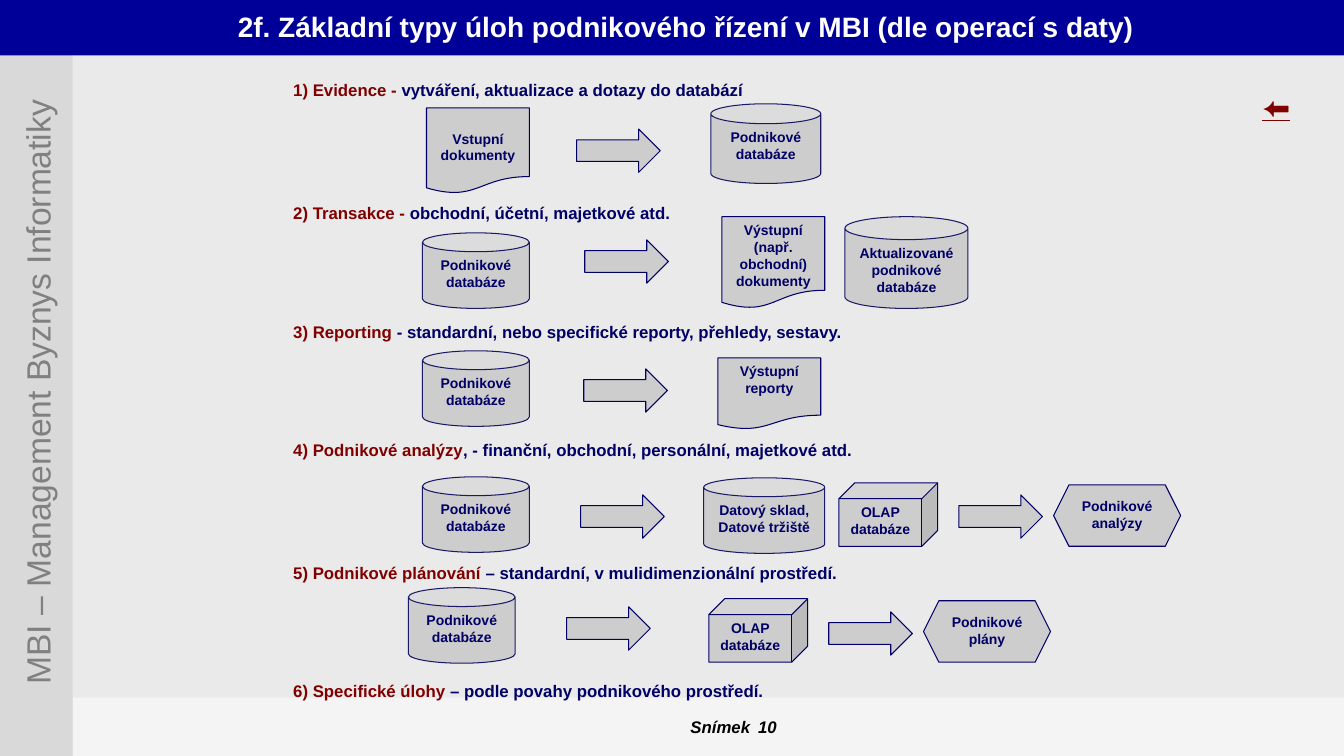
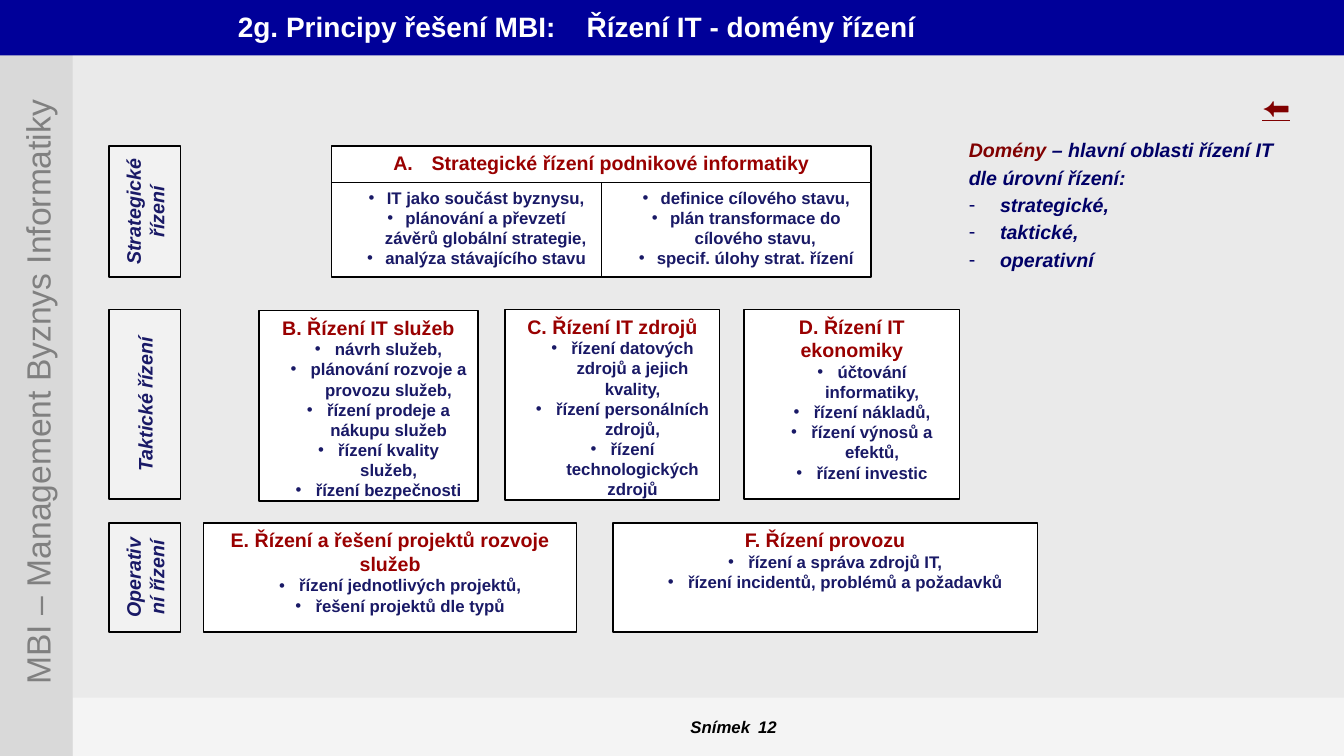
from dataclasses import dataclass

from lxml import etree
from pptx import Presentation
from pptx.dml.color import RGBColor
from pptx.enum.shapes import MSO_SHAPE as Preset
from pptx.enum.text import MSO_ANCHOR as Anchor, PP_ALIGN as Align
from pptx.oxml.ns import qn
from pptx.util import Inches, Pt

FONT = "Arial"
NAVY, INDIGO, MAROON, RED = "000066", "191966", "800000", "990000"
WHITE, BLACK = "FFFFFF", "000000"
PAGE_FILL, TITLE_BAND, SIDE_BAND, SIDE_TEXT = "EAEAEA", "000099", "D9D9D9", "808080"
LEVEL_FILL, SYMBOL_FILL = "F2F2F2", "B2B2B2"
WIDTH, HEIGHT, SIDE_WIDTH = 13.33, 7.5, 0.72

CAN, CUBE, HEXAGON = Preset.CAN, Preset.CUBE, Preset.HEXAGON
ARROW, DOCUMENT = Preset.RIGHT_ARROW, Preset.FLOWCHART_DOCUMENT
SYMBOL_SIZES = {CAN: (1.06, 0.75), CUBE: (0.98, 0.63), HEXAGON: (1.26, 0.61),
                ARROW: (0.83, 0.43), DOCUMENT: (1.02, 0.85)}


@dataclass
class Line:
    """One paragraph; spans are (text, colour) pairs."""
    spans: list
    size: float
    bold: bool = True
    italic: bool = False
    underline: bool = False
    align: Align = Align.LEFT
    bullet: str = ""
    margin: float = 0
    hanging: float = 0
    before: float = 0
    tab: float = 0


def colour(value):
    return RGBColor.from_string(value)


def box_of(left, top, width, height):
    return [Inches(value) for value in (left, top, width, height)]


def set_bullet(para, line):
    props = para._p.get_or_add_pPr()
    props.set("marL", str(Inches(line.margin)))
    props.set("indent", str(-Inches(line.hanging)))
    if line.bullet == "A.":
        etree.SubElement(props, qn("a:buAutoNum"), type="alphaUcPeriod")
    else:
        etree.SubElement(props, qn("a:buFont"), typeface=FONT)
        etree.SubElement(props, qn("a:buChar"), char=line.bullet)


def set_tab(para, position):
    stops = etree.SubElement(para._p.get_or_add_pPr(), qn("a:tabLst"))
    etree.SubElement(stops, qn("a:tab"), pos=str(Inches(position)), algn="l")


def write(shape, lines, anchor=Anchor.TOP, wrap=True):
    frame = shape.text_frame
    frame.word_wrap = wrap
    frame.vertical_anchor = anchor
    for index, line in enumerate(lines):
        para = frame.add_paragraph() if index else frame.paragraphs[0]
        if line.bullet:
            set_bullet(para, line)
        if line.tab:
            set_tab(para, line.tab)
        para.alignment = line.align
        if index and line.before:
            para.space_before = Pt(line.before)
        for text, tint in line.spans:
            span = para.add_run()
            span.text = text
            font = span.font
            font.name, font.size = FONT, Pt(line.size)
            font.bold, font.italic = line.bold, line.italic
            font.underline = line.underline
            font.color.rgb = colour(tint)


def add_text(page, box, lines, **options):
    shape = page.shapes.add_textbox(*box_of(*box))
    write(shape, lines, **options)
    return shape


def add_shape(page, preset, box, fill, outline=None, weight=1, alpha=None):
    shape = page.shapes.add_shape(preset, *box_of(*box))
    shape.shadow.inherit = False
    shape.fill.solid()
    shape.fill.fore_color.rgb = colour(fill)
    if alpha:
        tint = shape.element.spPr.find(qn("a:solidFill"))[0]
        etree.SubElement(tint, qn("a:alpha"), val=str(alpha * 1000))
    if outline:
        shape.line.color.rgb = colour(outline)
        shape.line.width = Pt(weight)
    else:
        shape.line.fill.background()
    return shape


def add_page(deck, title, number, title_tab=0):
    """Add a slide with the shared bands, title, footer and back arrow."""
    page = deck.slides.add_slide(deck.slide_layouts[6])
    page.background.fill.solid()
    page.background.fill.fore_color.rgb = colour(PAGE_FILL)
    add_shape(page, Preset.RECTANGLE,
              (SIDE_WIDTH, 6.92, WIDTH - SIDE_WIDTH, 0.58), WHITE, alpha=50)
    add_text(page, (6.75, 7.06, 1.1, 0.3),
             [Line([(f"Snímek\t{number}", BLACK)], 12, italic=True, tab=0.67)],
             anchor=Anchor.MIDDLE)
    add_shape(page, Preset.RECTANGLE, (0, 0, SIDE_WIDTH, HEIGHT), SIDE_BAND)
    add_shape(page, Preset.RECTANGLE, (0, 0, WIDTH, 0.55), TITLE_BAND)
    side = add_text(page, (-2.66, 3.64, 6.06, 0.5),
                    [Line([("MBI – Management Byznys Informatiky", SIDE_TEXT)],
                          24, bold=False, align=Align.CENTER)], wrap=False)
    side.rotation = 270
    add_text(page, (2.26, 0.05, 10.95, 0.67),
             [Line([(title, WHITE)], 20, tab=title_tab)])
    add_text(page, (12.42, 0.84, 0.58, 0.44),
             [Line([("⬅", MAROON)], 20, underline=True)])
    return page


def add_symbol(page, left, top, kind, text="", size=None, inset=0.05):
    outline = INDIGO if kind == CAN else NAVY
    shape = add_shape(page, kind, (left, top, *(size or SYMBOL_SIZES[kind])),
                      SYMBOL_FILL, outline, 0.75, alpha=50)
    if text:
        shape.text_frame.margin_top = Inches(inset)
        write(shape, [Line([(part, NAVY)], 10, align=Align.CENTER)
                      for part in text.split("\n")])


def add_task(page, left, top, name, detail, symbols):
    """Add a task heading and its symbols, offset from the heading's corner."""
    add_text(page, (left, top, 6.13, 0.3),
             [Line([(name, MAROON), (detail, NAVY)], 12)])
    for across, down, *symbol in symbols:
        add_symbol(page, left + across, top + down, *symbol)


DATABASE = (CAN, "Podnikové databáze")
OLAP = (CUBE, "OLAP databáze")
TASKS = [
    (0.74, "1) Evidence - ", "vytváření, aktualizace a dotazy do databází", [
        (1.42, 0.33, DOCUMENT, "Vstupní dokumenty", None, 0.22),
        (2.91, 0.54, ARROW),
        (4.24, 0.29, *DATABASE, (1.09, 0.79))]),
    (1.96, "2) Transakce - ", "obchodní, účetní, majetkové atd.", [
        (1.38, 0.35, *DATABASE),
        (2.99, 0.42, ARROW),
        (4.35, 0.19, DOCUMENT, "Výstupní (např. obchodní) dokumenty", (1.02, 0.91)),
        (5.57, 0.19, CAN, "Aktualizované podnikové databáze", (1.22, 0.91))]),
    (3.14, "3) Reporting ", "- standardní, nebo specifické reporty, přehledy, sestavy.", [
        (1.38, 0.34, *DATABASE),
        (2.98, 0.52, ARROW),
        (4.31, 0.41, DOCUMENT, "Výstupní reporty", (1.02, 0.71))]),
    (4.31, "4) Podnikové analýzy", ", - finanční, obchodní, personální, majetkové atd.", [
        (1.38, 0.42, *DATABASE),
        (2.95, 0.6, ARROW),
        (4.17, 0.43, CAN, "Datový sklad,\nDatové tržiště", (1.2, 0.75)),
        (5.51, 0.48, *OLAP),
        (6.7, 0.6, ARROW),
        (7.64, 0.5, HEXAGON, "Podnikové analýzy")]),
    (5.53, "5) Podnikové plánování ", "– standardní, v mulidimenzionální prostředí.", [
        (1.24, 0.3, *DATABASE),
        (2.81, 0.49, ARROW),
        (4.22, 0.41, *OLAP),
        (5.41, 0.54, ARROW),
        (6.35, 0.43, HEXAGON, "Podnikové plány")]),
    (6.7, "6) Specifické úlohy ", "– podle povahy podnikového prostředí.", []),
]


def build_tasks(deck):
    page = add_page(
        deck, "2f. Základní typy úloh podnikového řízení v MBI (dle operací s daty)", 10)
    for top, name, detail, symbols in TASKS:
        add_task(page, 2.81, top, name, detail, symbols)


def add_level(page, box, text):
    """Add the vertical label of one management level."""
    shape = add_shape(page, Preset.RECTANGLE, box, LEVEL_FILL, BLACK)
    write(shape, [Line([(text, INDIGO)], 14, italic=True, align=Align.CENTER)],
          anchor=Anchor.MIDDLE)
    shape.text_frame._txBody.bodyPr.set("vert", "vert270")


def add_domain(page, box, heading, items, margin=0.4, hanging=0.2):
    shape = add_shape(page, Preset.RECTANGLE, box, WHITE, BLACK)
    lines = [Line([(heading, RED)], 14, align=Align.CENTER)] if heading else []
    lines += [Line([(item, INDIGO)], 12, align=Align.CENTER, bullet="•",
                   margin=margin, hanging=hanging) for item in items]
    write(shape, lines)


def add_strategy(page, left, top, width):
    """Add domain A: a heading over two equal cells."""
    head, half = 0.36, width / 2
    shape = add_shape(page, Preset.RECTANGLE, (left, top, width, head), WHITE, BLACK)
    write(shape, [Line([("Strategické řízení podnikové informatiky", RED)], 14,
                       align=Align.CENTER, bullet="A.", margin=0.38, hanging=0.38)])
    cells = [["IT jako součást byznysu,", "plánování a převzetí závěrů globální strategie,",
              "analýza stávajícího stavu"],
             ["definice cílového stavu,", "plán transformace do cílového stavu,",
              "specif. úlohy strat. řízení"]]
    for column, items in enumerate(cells):
        add_domain(page, (left + column * half, top + head, half, 0.94), "", items,
                   margin=0.38, hanging=0.18)


def add_summary(page, box):
    style = dict(size=14, italic=True, before=2.8)
    lines = [Line([("Domény ", MAROON), ("– hlavní oblasti řízení IT", NAVY)], **style),
             Line([("dle úrovní řízení:", NAVY)], **style)]
    lines += [Line([(level, NAVY)], bullet="-", margin=0.31, hanging=0.31, **style)
              for level in ("strategické,", "taktické,", "operativní")]
    add_text(page, box, lines)


LEVELS = [(1.45, 1.3, "Strategické řízení"),
          (3.07, 1.88, "Taktické řízení"),
          (5.19, 1.08, "Operativní řízení")]
DOMAINS = [
    ((2.57, 3.08, 2.17, 1.89), "B. Řízení IT služeb",
     ["návrh služeb,", "plánování rozvoje a provozu služeb,",
      "řízení prodeje a nákupu služeb", "řízení kvality služeb,", "řízení bezpečnosti"]),
    ((5.01, 3.07, 2.13, 1.89), "C. Řízení IT zdrojů",
     ["řízení datových zdrojů a jejich kvality,", "řízení personálních zdrojů,",
      "řízení technologických zdrojů"]),
    ((7.38, 3.07, 2.14, 1.88), "D. Řízení IT ekonomiky",
     ["účtování informatiky,", "řízení nákladů,", "řízení výnosů a efektů,",
      "řízení investic"]),
    ((2.02, 5.19, 3.7, 1.08), "E. Řízení a řešení projektů rozvoje služeb",
     ["řízení jednotlivých projektů,", "řešení projektů dle typů"]),
    ((6.08, 5.19, 4.21, 1.08), "F. Řízení provozu",
     ["řízení a správa zdrojů IT,", "řízení incidentů, problémů a požadavků"]),
]


def build_domains(deck):
    page = add_page(deck, "2g. Principy řešení MBI:\tŘízení IT - domény řízení", 12,
                    title_tab=3.46)
    for top, height, text in LEVELS:
        add_level(page, (1.08, top, 0.71, height), text)
    add_strategy(page, 3.29, 1.45, 5.35)
    for box, heading, items in DOMAINS:
        add_domain(page, box, heading, items)
    add_summary(page, (9.51, 1.32, 3.69, 1.64))


def main():
    deck = Presentation()
    deck.slide_width, deck.slide_height = Inches(WIDTH), Inches(HEIGHT)
    build_tasks(deck)
    build_domains(deck)
    deck.save("out.pptx")


if __name__ == "__main__":
    main()
